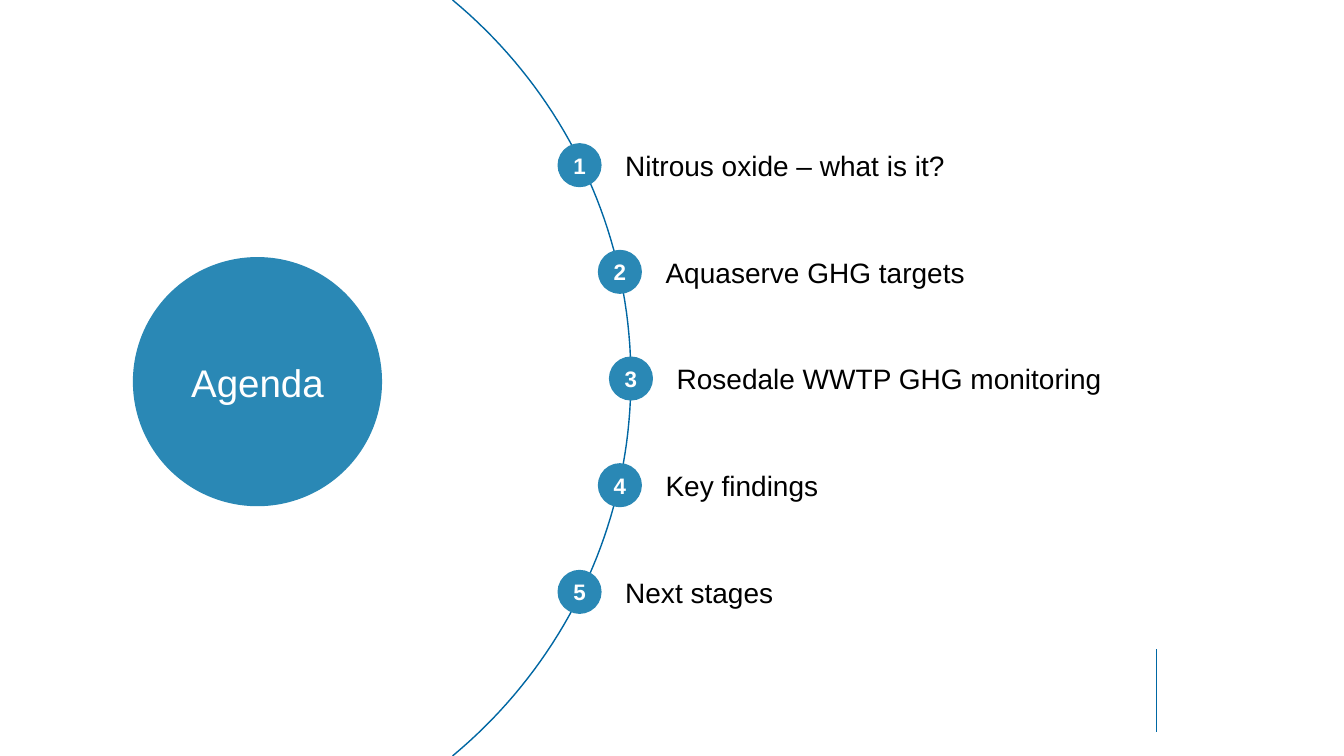
"""Build the agenda slide: a title disc and five numbered stops along an arc."""
from dataclasses import dataclass

from pptx import Presentation
from pptx.dml.color import RGBColor
from pptx.enum import shapes as es, text as et
from pptx.oxml import xmlchemy as xc
from pptx.util import Pt


@dataclass(frozen=True)
class Theme:
    """Colours, font and type sizes."""
    fill: str = "2A88B5"
    rule: str = "0067A3"
    ink: str = "000000"
    pale: str = "FFFFFF"
    font: str = "Arial"
    head: float = 27.5
    item: float = 20
    mark: float = 16


class Deck:
    """Holds the style and the current slide."""

    def __init__(self, slide, theme):
        """Keep the slide and its theme."""
        self.slide, self.theme = slide, theme

    def label(self, shape, words, size, color, bold=False, center=True, pad=0):
        """Set one run of text in a shape."""
        frame = shape.text_frame
        frame.word_wrap = True
        frame.auto_size = et.MSO_AUTO_SIZE.NONE
        frame.vertical_anchor = et.MSO_ANCHOR.MIDDLE
        frame.margin_left = frame.margin_right = Pt(pad)
        frame.margin_top = frame.margin_bottom = Pt(pad)
        para = frame.paragraphs[0]
        para.alignment = et.PP_ALIGN.CENTER if center else et.PP_ALIGN.LEFT
        run = para.add_run()
        run.text = words
        font = run.font
        font.name, font.size, font.bold = self.theme.font, Pt(size), bold
        font.color.rgb = RGBColor.from_string(color)

    def stroke(self, line, color, width):
        """Colour a line and set its width."""
        line.color.rgb = RGBColor.from_string(color)
        line.width = Pt(width)

    def disc(self, x, y, size, edge=True):
        """Add a filled circle centred on a point."""
        shape = self.slide.shapes.add_shape(
            es.MSO_SHAPE.OVAL, Pt(x - size / 2), Pt(y - size / 2), Pt(size), Pt(size))
        shape.shadow.inherit = False
        shape.fill.solid()
        shape.fill.fore_color.rgb = RGBColor.from_string(self.theme.fill)
        if edge:
            self.stroke(shape.line, self.theme.fill, 1)
        else:
            shape.line.fill.background()
        return shape

    def title(self, words, x, y, size):
        """Lay the title placeholder over a large disc."""
        self.disc(x, y, size, edge=False)
        head = self.slide.shapes.title
        head.left, head.top = Pt(x - size / 2), Pt(y - size / 2)
        head.width = head.height = Pt(size)
        head.element.getparent().append(head.element)
        self.label(head, words, self.theme.head, self.theme.pale, pad=2)

    def stop(self, mark, words, x, y, right):
        """Add a numbered disc and its label."""
        self.label(self.disc(x, y, 30.5), mark, self.theme.mark, self.theme.pale, bold=True)
        left, tall = x + 32.6, 24.5
        box = self.slide.shapes.add_textbox(
            Pt(left), Pt(y - tall / 2), Pt(right - left), Pt(tall))
        self.label(box, words, self.theme.item, self.theme.ink, center=False)

    def arc(self, curve, mid, steps=40):
        """Draw a Bezier half and its mirror image below the middle."""
        a, b, c, d = curve
        half = []
        for i in range(steps + 1):
            t = i / steps
            s = 1 - t
            half.append(tuple(
                s**3 * a[k] + 3 * s * s * t * b[k] + 3 * s * t * t * c[k] + t**3 * d[k]
                for k in (0, 1)))
        half += [(x, 2 * mid - y) for x, y in half[-2::-1]]
        dots = [(Pt(x), Pt(y)) for x, y in half]
        pen = self.slide.shapes.build_freeform(*dots[0])
        pen.add_line_segments(dots[1:], close=False)
        shape = pen.convert_to_shape()
        shape.shadow.inherit = False
        shape.fill.background()
        self.stroke(shape.line, self.theme.rule, 1)

    def rule(self, x, top, end):
        """Draw a thin upright line."""
        line = self.slide.shapes.add_connector(
            es.MSO_CONNECTOR.STRAIGHT, Pt(x), Pt(top), Pt(x), Pt(end))
        self.stroke(line.line, self.theme.rule, 0.75)
        line.element.spPr.append(xc.OxmlElement("a:effectLst"))


def main():
    """Build and save the slide."""
    prs = Presentation()
    prs.slide_width, prs.slide_height = Pt(960), Pt(540)
    deck = Deck(prs.slides.add_slide(prs.slide_layouts[5]), Theme())
    deck.rule(825.8, 463.7, 522.7)
    deck.arc([(323.3, 0), (403.9, 67), (450.7, 165.6), (450.7, 270)], 270)
    stops = [
        ("Nitrous oxide – what is it?", 414, 924),
        ("Aquaserve GHG targets", 442.8, 914.4),
        ("Rosedale WWTP GHG monitoring", 450.7, 914.4),
        ("Key findings", 442.8, 914.4),
        ("Next stages", 414, 924),
    ]
    for i, (words, x, right) in enumerate(stops):
        deck.stop(str(i + 1), words, x, 118 + 76.2 * i, right)
    deck.title("Agenda", 183.9, 272.6, 178)
    prs.save("out.pptx")


if __name__ == "__main__":
    main()
